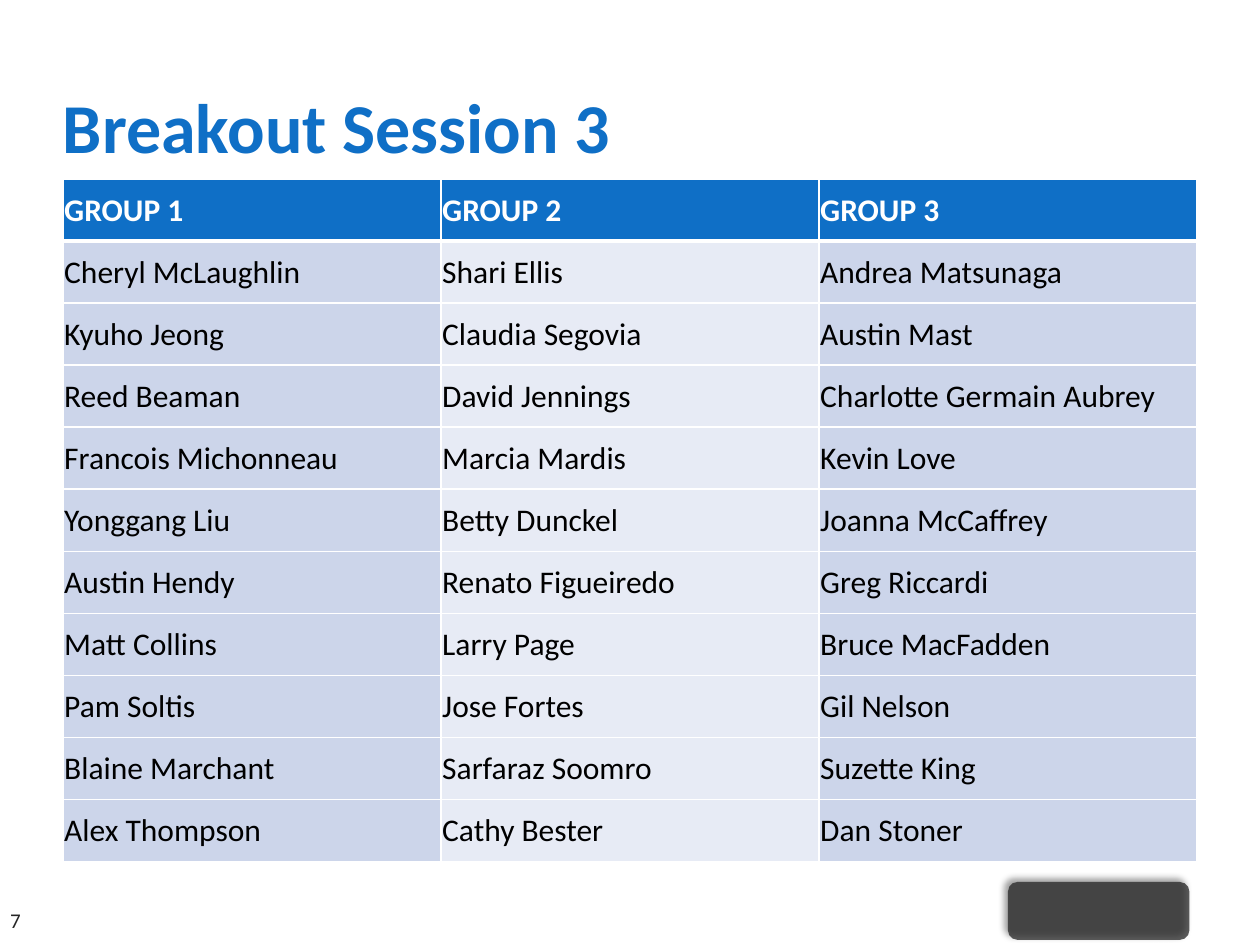
from dataclasses import dataclass

from lxml import etree
from pptx import Presentation
from pptx import util as u
from pptx.dml.color import RGBColor
from pptx.enum import shapes, text
from pptx.oxml import parse_xml
from pptx.oxml.ns import nsdecls, qn


@dataclass(frozen=True)
class Theme:
    font: str = "Calibri"
    blue: str = "0F6FC6"
    dark: str = "262626"
    black: str = "000000"
    white: str = "FFFFFF"
    bands: tuple = ("CCD5EA", "E7EBF5")
    title_size: int = 40
    table_size: int = 18
    number_size: int = 12


def write(frame, content, *, size, color, bold=False,
          anchor=text.MSO_ANCHOR.BOTTOM):
    frame.word_wrap = True
    frame.vertical_anchor = anchor
    paragraph = frame.paragraphs[0]
    paragraph.alignment = text.PP_ALIGN.LEFT
    run = paragraph.add_run()
    run.text = content
    run.font.name = theme.font
    run.font.size = u.Pt(size)
    run.font.bold = bold
    run.font.color.rgb = RGBColor.from_string(color)


def add_borders(cell, **widths):
    """Draw white cell borders; widths are points, keyed by side L, R, T, B."""
    properties = cell._tc.get_or_add_tcPr()
    for side, width in widths.items():
        properties.append(parse_xml(
            f'<a:ln{side} {nsdecls("a")} w="{u.Pt(width)}"><a:solidFill>'
            f'<a:srgbClr val="{theme.white}"/></a:solidFill></a:ln{side}>'))


theme = Theme()
presentation = Presentation()
presentation.slide_width, presentation.slide_height = u.Inches(10), u.Inches(7.5)
slide = presentation.slides.add_slide(presentation.slide_layouts[6])
margin = 0.05 * presentation.slide_width
content_width = presentation.slide_width - 2 * margin
footer_top = u.Inches(7)

# Footer badge
badge = slide.shapes.add_shape(shapes.MSO_SHAPE.ROUNDED_RECTANGLE, u.Inches(8),
                               footer_top, u.Inches(1.44), u.Inches(0.46))
badge.fill.solid()
badge.fill.fore_color.rgb = RGBColor.from_string(theme.dark)
badge.line.fill.background()
badge.shadow.inherit = False
badge_properties = badge._element.spPr
fill_color = badge_properties.find(qn("a:solidFill")).find(qn("a:srgbClr"))
etree.SubElement(fill_color, qn("a:alpha"), val="75000")
badge_properties.find(qn("a:effectLst")).append(parse_xml(
    f'<a:outerShdw {nsdecls("a")} blurRad="{u.Pt(4)}" dist="{u.Pt(3)}" '
    f'dir="{225 * 60000}" rotWithShape="0"><a:srgbClr val="{theme.black}">'
    '<a:alpha val="50000"/></a:srgbClr></a:outerShdw>'))

# Title and slide number
labels = [
    ("Breakout Session 3", (margin, u.Inches(0.58), content_width, u.Inches(0.75)),
     0.05, dict(size=theme.title_size, color=theme.blue, bold=True)),
    ("7", (u.Inches(0.08), footer_top, u.Inches(0.5), u.Inches(0.4)),
     0, dict(size=theme.number_size, color=theme.dark)),
]
for content, place, top_inset, style in labels:
    frame = slide.shapes.add_textbox(*map(int, place)).text_frame
    frame.margin_left = frame.margin_right = frame.margin_bottom = 0
    frame.margin_top = u.Inches(top_inset)
    write(frame, content, **style)

# Group table
groups = [
    ("GROUP 1", "GROUP 2", "GROUP 3"),
    ("Cheryl McLaughlin", "Shari Ellis", "Andrea Matsunaga"),
    ("Kyuho Jeong", "Claudia Segovia", "Austin Mast"),
    ("Reed Beaman", "David Jennings", "Charlotte Germain Aubrey"),
    ("Francois Michonneau", "Marcia Mardis", "Kevin Love"),
    ("Yonggang Liu", "Betty Dunckel", "Joanna McCaffrey"),
    ("Austin Hendy", "Renato Figueiredo", "Greg Riccardi"),
    ("Matt Collins", "Larry Page", "Bruce MacFadden"),
    ("Pam Soltis", "Jose Fortes", "Gil Nelson"),
    ("Blaine Marchant", "Sarfaraz Soomro", "Suzette King"),
    ("Alex Thompson", "Cathy Bester", "Dan Stoner"),
]
table = slide.shapes.add_table(len(groups), len(groups[0]), int(margin), u.Inches(1.42),
                               int(content_width), u.Inches(5.42)).table
for row, names in enumerate(groups):
    header = row == 0
    for column, name in enumerate(names):
        cell = table.cell(row, column)
        cell.margin_left = cell.margin_right = cell.margin_top = u.Inches(0.01)
        cell.margin_bottom = 0
        add_borders(cell, L=1, R=1, T=3 if row == 1 else 1, B=3 if header else 1)
        cell.fill.solid()
        cell.fill.fore_color.rgb = RGBColor.from_string(
            theme.blue if header else theme.bands[column % 2])
        write(cell.text_frame, name, size=theme.table_size, bold=header,
              color=theme.white if header else theme.black)
        cell.vertical_anchor = text.MSO_ANCHOR.MIDDLE

presentation.save("out.pptx")
